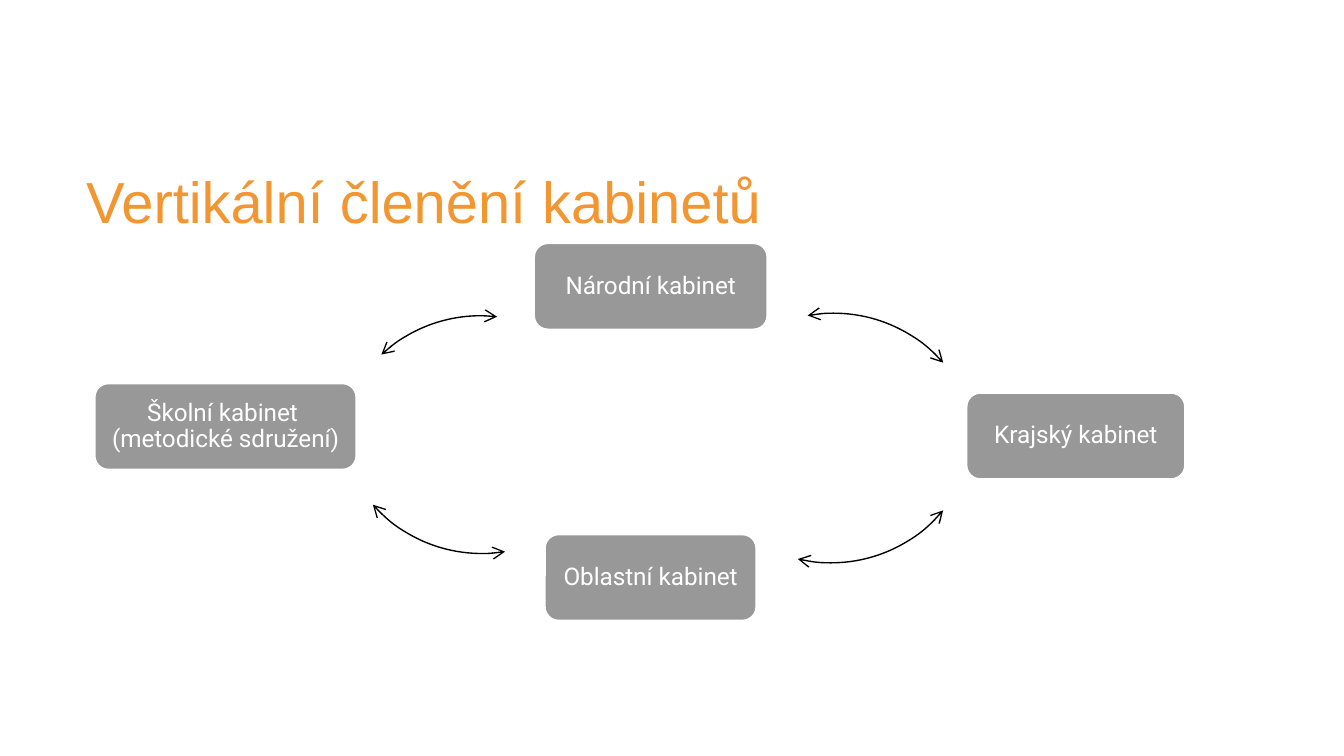
from pptx import Presentation
from pptx.dml.color import RGBColor
from pptx.enum.shapes import MSO_SHAPE as Preset
from pptx.enum.text import MSO_ANCHOR as Anchor, PP_ALIGN as Align
from pptx.oxml.ns import qn
from pptx.util import Pt
from lxml.etree import SubElement


def color(value):
    return RGBColor.from_string(value)


def write(shape, text, frame_format, paragraph_format, font_format, font_color):
    frame = shape.text_frame
    frame.text = text
    paragraph = frame.paragraphs[0]
    for target, values in (
        (frame, frame_format),
        (paragraph, paragraph_format),
        (paragraph.font, font_format),
    ):
        for name, value in values.items():
            setattr(target, name, value)
    paragraph.font.color.rgb = color(font_color)


def_margins = ("margin_left", "margin_right", "margin_top", "margin_bottom")
title_frame = {"word_wrap": True, "vertical_anchor": Anchor.TOP} | dict.fromkeys(def_margins, Pt(3.6))
box_frame = {"word_wrap": True, "vertical_anchor": Anchor.MIDDLE} | dict.fromkeys(def_margins, Pt(6))
title_paragraph = {"line_spacing": 1.2}
box_paragraph = {"alignment": Align.CENTER, "line_spacing": 0.9, "space_after": Pt(4.5)}
title_font = {"name": "Arial", "size": Pt(31)}
box_font = {"name": "Roboto", "size": Pt(13)}

presentation = Presentation()
presentation.slide_width, presentation.slide_height = Pt(720), Pt(405)
slide = presentation.slides.add_slide(presentation.slide_layouts[6])

title = slide.shapes.add_textbox(Pt(42.5), Pt(77.8), Pt(622.8), Pt(51.8))
write(title, "Vertikální členění kabinetů", title_frame, title_paragraph, title_font, "F29631")

box_height = 47.2
boxes = [
    ("Národní kabinet", 285.6, 129.8, 126),
    ("Krajský kabinet", 517.3, 210, 118.1),
    ("Oblastní kabinet", 291.4, 285.8, 114.3),
    ("Školní kabinet \v(metodické sdružení)", 50.2, 204.9, 141.2),
]
for text, left, top, width in boxes:
    box = slide.shapes.add_shape(Preset.ROUNDED_RECTANGLE, Pt(left), Pt(top), Pt(width), Pt(box_height))
    box.shadow.inherit = False
    box.fill.solid()
    box.fill.fore_color.rgb = color("989898")
    box.line.color.rgb = color("FFFFFF")
    box.line.width = Pt(2)
    write(box, text, box_frame, box_paragraph, box_font, "FFFFFF")

arc_size = 156.2
arcs = [
    (368.6, 167.8, 259.7, 318.7),
    (367.2, 145.4, 39.8, 103.2),
    (180, 140.4, 80.8, 138.3),
    (179.3, 169.2, 227.2, 276.6),
]
for left, top, start_angle, end_angle in arcs:
    arc = slide.shapes.add_shape(Preset.ARC, Pt(left), Pt(top), Pt(arc_size), Pt(arc_size))
    arc.shadow.inherit = False
    arc.fill.background()
    arc.line.color.rgb = color("000000")
    arc.line.width = Pt(0.75)
    for index, angle in enumerate((start_angle, end_angle)):
        arc.adjustments[index] = angle * 0.6
    line = arc.line._get_or_add_ln()
    for end in ("a:headEnd", "a:tailEnd"):
        SubElement(line, qn(end), type="arrow")

presentation.save("out.pptx")
